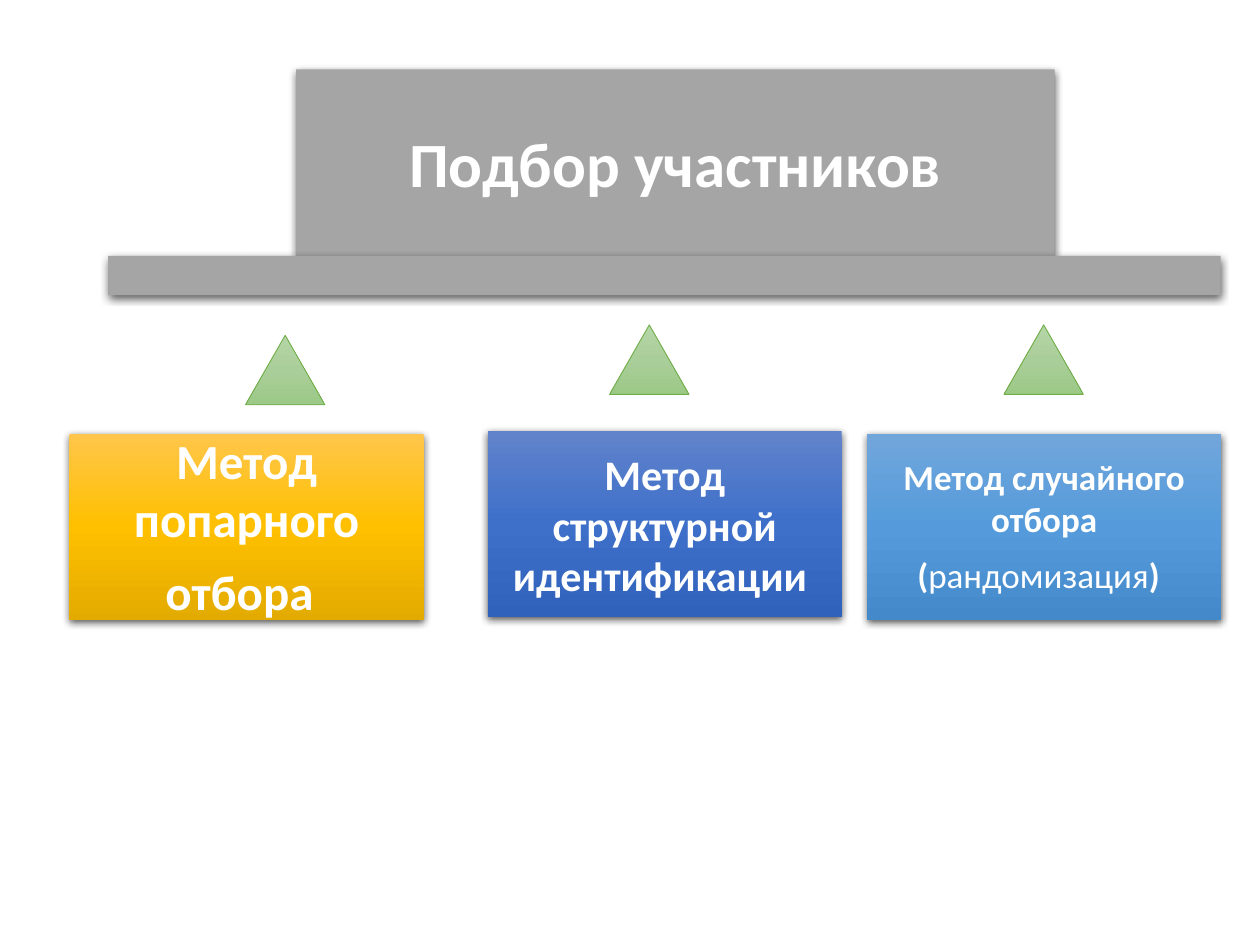
from copy import deepcopy

from lxml.etree import SubElement
from pptx import Presentation
from pptx.dml.color import RGBColor
from pptx.enum.shapes import MSO_SHAPE as Shape
from pptx.enum.text import MSO_ANCHOR as Anchor, PP_ALIGN as Align
from pptx.oxml.ns import qn
from pptx.util import Cm, Pt

COLORS = {
    "grey": ["A5A5A5"],
    "gold": ["FFC64B", "FFC000", "E3AB00"],
    "indigo": ["6183CB", "3E70CA", "3062BB"],
    "blue": ["71A6DB", "559BDB", "448ACA"],
    "green": ["B5D5A7", "AACE9A", "9CC987"],
    "outline": "70AD47",
    "text": "FFFFFF",
    "shadow": "000000",
}

deck = Presentation()
deck.slide_width, deck.slide_height = Cm(25.4), Cm(19.05)
page = deck.slides.add_slide(deck.slide_layouts[6])


def add_figure(kind, left, top, width, height, color):
    """Add a shape with a flat fill or a vertical three-stop gradient."""
    shape = page.shapes.add_shape(kind, Cm(left), Cm(top), Cm(width), Cm(height))
    shape.shadow.inherit = False
    shades = COLORS[color]
    if len(shades) == 1:
        shape.fill.solid()
        shape.fill.fore_color.rgb = RGBColor.from_string(shades[0])
    else:
        shape.fill.gradient()
        shape.fill.gradient_angle = 270
        stops = shape._element.spPr.find(qn("a:gradFill")).find(qn("a:gsLst"))
        stops.insert(1, deepcopy(stops[0]))
        for stop, shade, position in zip(shape.fill.gradient_stops, shades, (0, 0.5, 1)):
            stop.color.rgb = RGBColor.from_string(shade)
            stop.position = position
    return shape


def add_block(left, top, width, height, color, paragraphs=()):
    """Add a shadowed rectangle; paragraphs hold (text, size, bold) runs."""
    box = add_figure(Shape.RECTANGLE, left, top, width, height, color)
    box.line.fill.background()
    effects = box._element.spPr.find(qn("a:effectLst"))
    shadow = SubElement(effects, qn("a:outerShdw"), blurRad=str(Pt(4.5)),
                        dist=str(Pt(1.5)), dir="5400000", algn="ctr", rotWithShape="0")
    tint = SubElement(shadow, qn("a:srgbClr"), val=COLORS["shadow"])
    SubElement(tint, qn("a:alpha"), val="63000")

    frame = box.text_frame
    frame.word_wrap = True
    frame.vertical_anchor = Anchor.MIDDLE
    for index, runs in enumerate(paragraphs):
        para = frame.add_paragraph() if index else frame.paragraphs[0]
        para.alignment = Align.CENTER
        for text, size, bold in runs:
            span = para.add_run()
            span.text = text
            style = {"name": "Calibri", "size": Pt(size), "bold": bold}
            for name, value in style.items():
                setattr(span.font, name, value)
            span.font.color.rgb = RGBColor.from_string(COLORS["text"])


# Heading
add_block(5.97, 1.4, 15.29, 3.76, "grey", [[("Подбор участников", 36, True)]])

# Method cards
cards = [
    (1.4, 8.74, "gold", [[("Метод попарного отбора", 28, True), (" ", 36, False)]]),
    (9.83, 8.69, "indigo", [[("Метод структурной идентификации ", 24, True)]]),
    (17.48, 8.74, "blue", [
        [("Метод случайного отбора", 20, True)],
        [("(", 20, True), ("рандомизация", 20, False), (")", 20, True), (" ", 28, False)],
    ]),
]
for left, top, color, paragraphs in cards:
    add_block(left, top, 7.14, 3.76, color, paragraphs)

# Bar under the heading
add_block(2.18, 5.16, 22.43, 0.79, "grey")

# Triangles pointing from the cards to the bar
for left, top in [(4.95, 6.76), (12.29, 6.55), (20.24, 6.55)]:
    triangle = add_figure(Shape.ISOSCELES_TRIANGLE, left, top, 1.6, 1.4, "green")
    triangle.line.color.rgb = RGBColor.from_string(COLORS["outline"])
    triangle.line.width = Pt(0.5)

deck.save("out.pptx")
